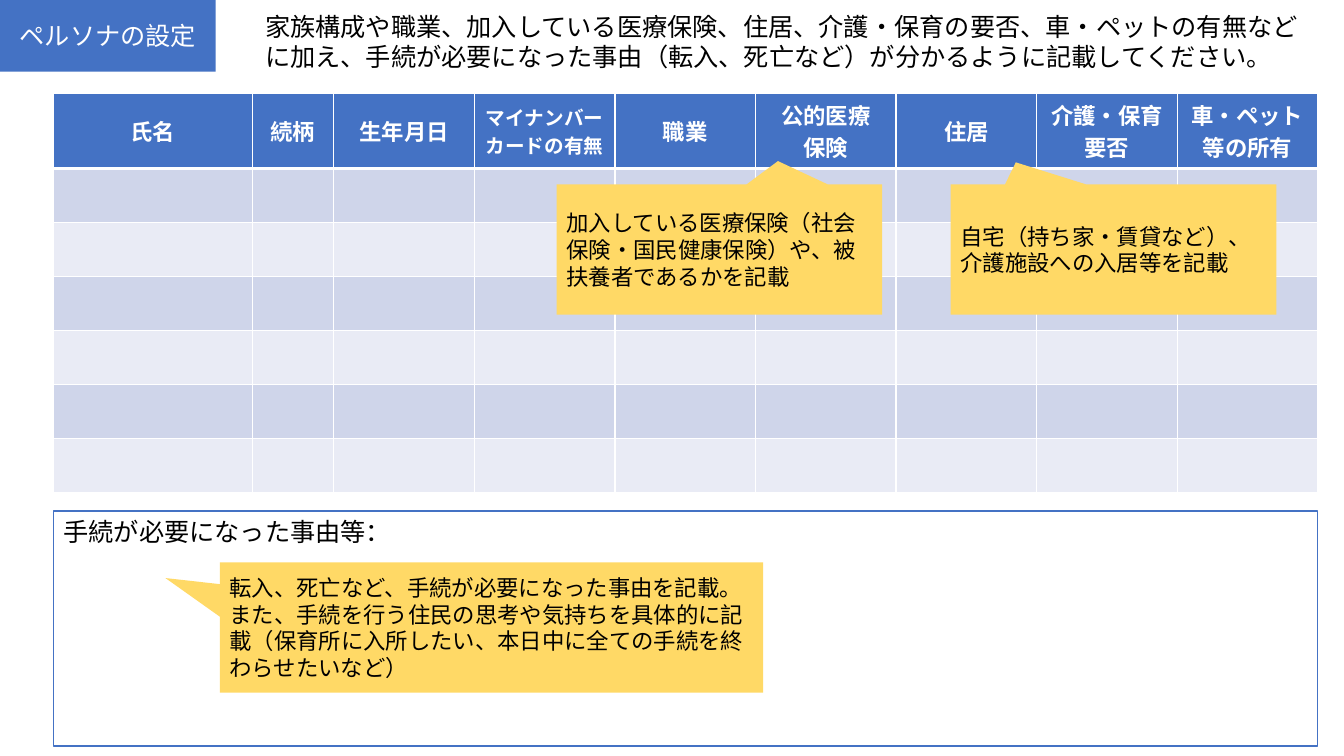
from lxml.etree import SubElement
from pptx import Presentation
from pptx.dml.color import RGBColor
from pptx.enum.shapes import MSO_SHAPE
from pptx.enum.text import MSO_ANCHOR, MSO_AUTO_SIZE, PP_ALIGN
from pptx.oxml.ns import qn
from pptx.util import Inches, Pt

FONT = "Noto Sans CJK JP"
COLOURS = {
    "blue": "4472C4",
    "yellow": "FFD966",
    "band_dark": "CFD5EA",
    "band_light": "E9EBF5",
    "white": "FFFFFF",
    "black": "000000",
}
SLIDE_WIDTH, SLIDE_HEIGHT = Inches(13.33), Inches(7.5)
LEFT_EDGE, CONTENT_WIDTH = 3.98, 94.07
BANNER_HEIGHT = 9.47
CALLOUT_HEIGHT = 17.2
HEADER_HEIGHT, ROW_HEIGHT, PERSON_ROWS = 9.73, 7.15, 6
NAME_WIDTH, RELATION_WIDTH = 14.78, 6.08
HEADINGS = [
    ("氏名", 16),
    ("続柄", 16),
    ("生年月日", 16),
    ("マイナンバーカードの有無", 14),
    ("職業", 16),
    ("公的医療\n保険", 16),
    ("住居", 16),
    ("介護・保育\n要否", 16),
    ("車・ペット等の所有", 16),
]


def across(percent):
    return round(SLIDE_WIDTH * percent / 100)


def down(percent):
    return round(SLIDE_HEIGHT * percent / 100)


def box(left, top, width, height):
    """Turn percentages of the slide into a position and size."""
    return across(left), down(top), across(width), down(height)


def colour(name):
    return RGBColor.from_string(COLOURS[name])


def paint(target, name):
    target.fill.solid()
    target.fill.fore_color.rgb = colour(name)


def write(text_frame, text, size, colour_name="black", align=PP_ALIGN.LEFT, bold=False):
    text_frame.text = text
    text_frame.word_wrap = True
    for paragraph in text_frame.paragraphs:
        paragraph.alignment = align
        for run in paragraph.runs:
            run.font.name = FONT
            run.font.size = Pt(size)
            run.font.bold = bold
            run.font.color.rgb = colour(colour_name)
            SubElement(run.font._element, qn("a:ea"), typeface=FONT)


def add_title(slide, text):
    title = slide.shapes.title
    title.left, title.top, title.width, title.height = box(0, 0, 16.05, BANNER_HEIGHT)
    paint(title, "blue")
    write(title.text_frame, text, 18, "white", PP_ALIGN.CENTER)
    title.text_frame.auto_size = MSO_AUTO_SIZE.NONE
    title.text_frame.vertical_anchor = MSO_ANCHOR.MIDDLE


def add_instruction(slide, text):
    instruction = slide.shapes.add_textbox(*box(18.98, 0.8, 79.67, BANNER_HEIGHT))
    write(instruction.text_frame, text, 18)


def add_borders(cell, widths):
    """Draw white borders; widths maps a border tag to points."""
    properties = cell._tc.get_or_add_tcPr()
    for tag, width in widths.items():
        line = SubElement(properties, qn(f"a:{tag}"), w=str(Pt(width)))
        fill = SubElement(line, qn("a:solidFill"))
        SubElement(fill, qn("a:srgbClr"), val=COLOURS["white"])


def add_persona_table(slide):
    height = HEADER_HEIGHT + PERSON_ROWS * ROW_HEIGHT
    table = slide.shapes.add_table(
        PERSON_ROWS + 1, len(HEADINGS), *box(LEFT_EDGE, 12.4, CONTENT_WIDTH, height)
    ).table
    detail_count = len(HEADINGS) - 2
    detail_width = (CONTENT_WIDTH - NAME_WIDTH - RELATION_WIDTH) / detail_count
    widths = [NAME_WIDTH, RELATION_WIDTH] + [detail_width] * detail_count
    for column, width in zip(table.columns, widths):
        column.width = across(width)

    for row_index, row in enumerate(table.rows):
        is_header = row_index == 0
        row.height = down(HEADER_HEIGHT if is_header else ROW_HEIGHT)
        band = "band_dark" if row_index % 2 else "band_light"
        borders = {
            "lnL": 1,
            "lnR": 1,
            "lnT": 3 if row_index == 1 else 1,
            "lnB": 3 if is_header else 1,
        }
        for cell in row.cells:
            add_borders(cell, borders)
            paint(cell, "blue" if is_header else band)

    for cell, (heading, size) in zip(table.rows[0].cells, HEADINGS):
        write(cell.text_frame, heading, size, "white", PP_ALIGN.CENTER, bold=True)
        cell.vertical_anchor = MSO_ANCHOR.MIDDLE


def add_filled_shape(slide, kind, place, fill, text, size, anchor):
    shape = slide.shapes.add_shape(kind, *box(*place))
    shape.shadow.inherit = False
    paint(shape, fill)
    shape.line.fill.background()
    write(shape.text_frame, text, size)
    shape.text_frame.vertical_anchor = anchor
    return shape


def add_reason_box(slide, text):
    reason = add_filled_shape(
        slide, MSO_SHAPE.RECTANGLE, (LEFT_EDGE, 67.6, CONTENT_WIDTH, 31.07),
        "white", text, 18, MSO_ANCHOR.TOP,
    )
    reason.line.color.rgb = colour("blue")
    reason.line.width = Pt(1)


def add_callout(slide, left, top, width, tip, text):
    """Add a note whose tip is given as shares of its size from its centre."""
    callout = add_filled_shape(
        slide, MSO_SHAPE.RECTANGULAR_CALLOUT, (left, top, width, CALLOUT_HEIGHT),
        "yellow", text, 16, MSO_ANCHOR.MIDDLE,
    )
    callout.adjustments[0], callout.adjustments[1] = tip


def main():
    presentation = Presentation()
    presentation.slide_width, presentation.slide_height = SLIDE_WIDTH, SLIDE_HEIGHT
    slide = presentation.slides.add_slide(presentation.slide_layouts.get_by_name("Title Only"))

    add_title(slide, "ペルソナの設定")
    add_persona_table(slide)
    add_reason_box(slide, "手続が必要になった事由等：")
    add_instruction(
        slide,
        "家族構成や職業、加入している医療保険、住居、介護・保育の要否、車・ペットの有無など"
        "に加え、手続が必要になった事由（転入、死亡など）が分かるように記載してください。",
    )
    add_callout(
        slide, 41.41, 24.4, 24.23, (0.18, -0.68),
        "加入している医療保険（社会保険・国民健康保険）や、被扶養者であるかを記載",
    )
    add_callout(
        slide, 70.74, 24.4, 24.23, (-0.3, -0.67),
        "自宅（持ち家・賃貸など）、介護施設への入居等を記載",
    )
    add_callout(
        slide, 16.35, 74.4, 40.43, (-0.6, -0.38),
        "転入、死亡など、手続が必要になった事由を記載。\n"
        "また、手続を行う住民の思考や気持ちを具体的に記載"
        "（保育所に入所したい、本日中に全ての手続を終わらせたいなど）",
    )
    presentation.save("out.pptx")


if __name__ == "__main__":
    main()
